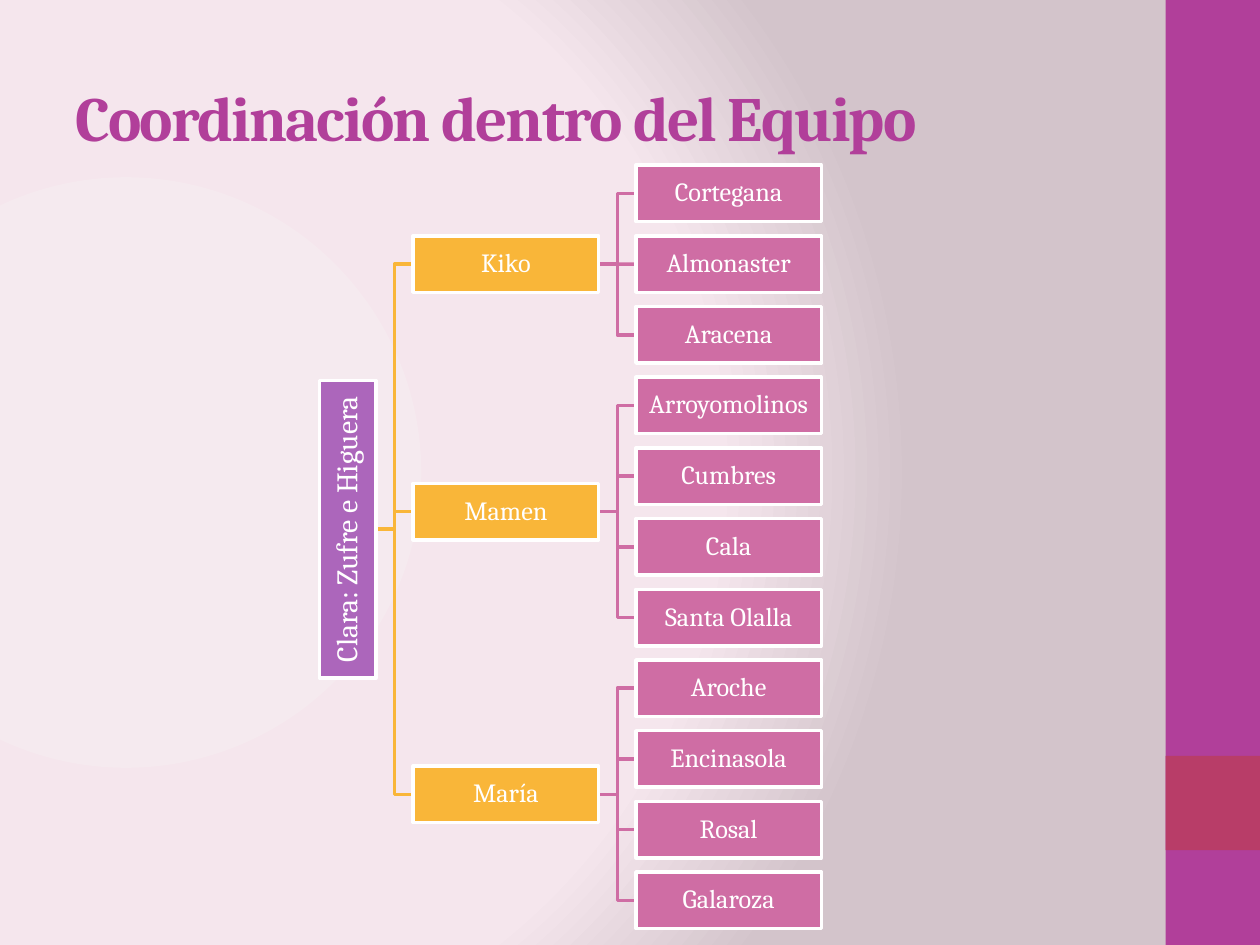
from lxml.etree import SubElement
from pptx import Presentation
from pptx.dml.color import RGBColor
from pptx.enum.shapes import MSO_CONNECTOR, MSO_SHAPE
from pptx.enum.text import MSO_ANCHOR, PP_ALIGN
from pptx.oxml import parse_xml
from pptx.oxml.ns import nsdecls, qn
from pptx.util import Cm, Pt

COLORS = {
    "title": "B13F9A", "band": "B13F9A", "accent": "B83D68",
    "root": "AC66BB", "manager": "F9B639", "town": "CF6DA4", "white": "FFFFFF",
}
BACKGROUND_STOPS = [(0, "F5EAEF"), (75, "F5E6ED"), (100, "D3C4CB")]
FONT = "Cambria"

ROOT = "Clara: Zufre e Higuera"
TEAMS = {
    "Kiko": ["Cortegana", "Almonaster", "Aracena"],
    "Mamen": ["Arroyomolinos", "Cumbres", "Cala", "Santa Olalla"],
    "María": ["Aroche", "Encinasola", "Rosal", "Galaroza"],
}

# Chart grid, in centimetres
BOX_WIDTH, BOX_HEIGHT, GAP = 3.74, 1.14, 0.75
ROW_STEP = BOX_HEIGHT * 1.25
FIRST_ROW = 3.9
ROOT_LENGTH = 6
MANAGER_LEFT = 8.33
TOWN_LEFT = MANAGER_LEFT + BOX_WIDTH + GAP
ROOT_RIGHT = MANAGER_LEFT - GAP


class SlideBuilder:
    def __init__(self, slide):
        self.slide = slide
        self.shapes = slide.shapes

    def background(self):
        stops = "".join(
            f'<a:gs pos="{position * 1000}"><a:srgbClr val="{color}"/></a:gs>'
            for position, color in BACKGROUND_STOPS)
        self.slide.element.cSld.insert(0, parse_xml(
            f'<p:bg {nsdecls("p", "a")}><p:bgPr><a:gradFill rotWithShape="1">'
            f'<a:gsLst>{stops}</a:gsLst><a:path path="circle">'
            '<a:fillToRect l="20000" t="50000" r="100000" b="50000"/></a:path>'
            '</a:gradFill><a:effectLst/></p:bgPr></p:bg>'))

    def format_text(self, frame, size, color, bold=False):
        frame.word_wrap = True
        frame.vertical_anchor = MSO_ANCHOR.MIDDLE
        font = frame.paragraphs[0].runs[0].font
        font.name, font.size, font.bold = FONT, Pt(size), bold
        font.color.rgb = RGBColor.from_string(COLORS[color])

    def title(self, text, left, top, width, height):
        title = self.shapes.title
        title.left, title.top = Cm(left), Cm(top)
        title.width, title.height = Cm(width), Cm(height)
        title.text_frame.text = text
        self.format_text(title.text_frame, 36, "title", bold=True)
        para = title.text_frame.paragraphs[0]
        para.alignment = PP_ALIGN.LEFT
        para.runs[0]._r.get_or_add_rPr().set("spc", "-100")

    def rectangle(self, left, top, width, height, color):
        box = self.shapes.add_shape(
            MSO_SHAPE.RECTANGLE, Cm(left), Cm(top), Cm(width), Cm(height))
        box.shadow.inherit = False
        box.fill.solid()
        box.fill.fore_color.rgb = RGBColor.from_string(COLORS[color])
        box.line.fill.background()
        return box

    def node(self, text, center_x, center_y, color, width=BOX_WIDTH, size=15, rotation=0):
        box = self.rectangle(center_x - width / 2, center_y - BOX_HEIGHT / 2,
                             width, BOX_HEIGHT, color)
        box.rotation = rotation
        self.format_line(box.line, "white")
        frame = box.text_frame
        frame.margin_left = frame.margin_right = Cm(0.03)
        frame.margin_top = frame.margin_bottom = Cm(0.03)
        frame.text = text
        para = frame.paragraphs[0]
        para.alignment = PP_ALIGN.CENTER
        para.line_spacing = 0.9
        self.format_text(frame, size, "white")

    def format_line(self, line, color):
        line.color.rgb = RGBColor.from_string(COLORS[color])
        line.width = Pt(2)

    def branch(self, left, start_y, end_y, color):
        right, bend = left + GAP, left + GAP / 2
        if abs(start_y - end_y) < 0.01:
            link = self.shapes.add_connector(
                MSO_CONNECTOR.STRAIGHT, Cm(left), Cm(start_y), Cm(right), Cm(end_y))
            SubElement(link._element.spPr, qn("a:effectLst"))
            self.format_line(link.line, color)
            return
        outline = self.shapes.build_freeform(Cm(left), Cm(start_y))
        corners = [(bend, start_y), (bend, end_y), (right, end_y)]
        outline.add_line_segments([(Cm(x), Cm(y)) for x, y in corners], close=False)
        link = outline.convert_to_shape()
        link.shadow.inherit = False
        link.fill.background()
        self.format_line(link.line, color)


def main():
    deck = Presentation()
    deck.slide_width, deck.slide_height = Cm(25.4), Cm(19.05)
    page = SlideBuilder(deck.slides.add_slide(deck.slide_layouts[5]))

    # Background, side band and title
    page.background()
    page.rectangle(23.5, 0, 1.9, 19.05, "band")
    page.rectangle(23.5, 15.24, 1.9, 1.9, "accent")
    page.title("Coordinación dentro del Equipo", 1.27, 0.76, 21.16, 3.18)

    # Row centres: each manager sits midway along their towns
    rows, managers, used = {}, {}, 0
    for manager, towns in TEAMS.items():
        for town in towns:
            rows[town] = FIRST_ROW + used * ROW_STEP
            used += 1
        managers[manager] = (rows[towns[0]] + rows[towns[-1]]) / 2
    centers = list(managers.values())
    root_y = (centers[0] + centers[-1]) / 2

    # Branches, behind the boxes
    for manager, towns in TEAMS.items():
        for town in towns:
            page.branch(TOWN_LEFT - GAP, managers[manager], rows[town], "town")
        page.branch(ROOT_RIGHT, root_y, managers[manager], "manager")

    # Boxes
    page.node(ROOT, ROOT_RIGHT - BOX_HEIGHT / 2, root_y, "root",
              width=ROOT_LENGTH, size=17, rotation=270)
    for manager, center_y in managers.items():
        page.node(manager, MANAGER_LEFT + BOX_WIDTH / 2, center_y, "manager")
    for town, center_y in rows.items():
        page.node(town, TOWN_LEFT + BOX_WIDTH / 2, center_y, "town")

    deck.save("out.pptx")


if __name__ == "__main__":
    main()
